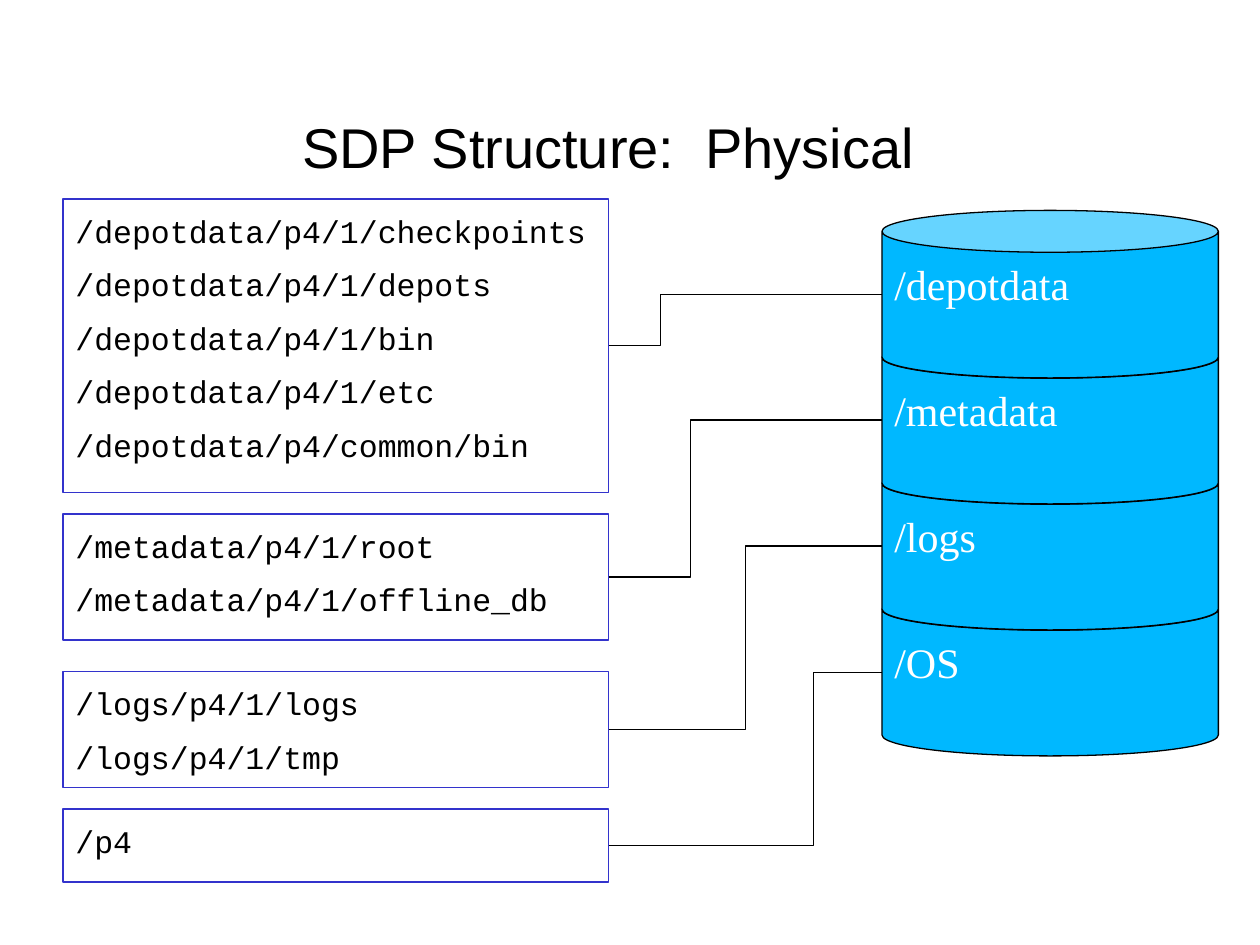
from lxml.etree import SubElement
from pptx import Presentation
from pptx.dml.color import RGBColor
from pptx.enum.shapes import MSO_CONNECTOR, MSO_SHAPE
from pptx.enum.text import MSO_ANCHOR, PP_ALIGN
from pptx.oxml.ns import qn
from pptx.util import Inches, Pt

BLACK = RGBColor(0x00, 0x00, 0x00)
WHITE = RGBColor(0xFF, 0xFF, 0xFF)
CYAN = RGBColor(0x00, 0xB8, 0xFF)
INDIGO = RGBColor(0x33, 0x33, 0xCC)

VOLUMES = [
    ("/depotdata", 1.58, 2.33, 0.19, [
        "/depotdata/p4/1/checkpoints",
        "/depotdata/p4/1/depots",
        "/depotdata/p4/1/bin",
        "/depotdata/p4/1/etc",
        "/depotdata/p4/common/bin",
    ]),
    ("/metadata", 4.08, 1, 0.3, ["/metadata/p4/1/root", "/metadata/p4/1/offline_db"]),
    ("/logs", 5.33, 0.92, 0.5, ["/logs/p4/1/logs", "/logs/p4/1/tmp"]),
    ("/OS", 6.42, 0.58, 0.75, ["/p4"]),
]


def write(tf, lines, font, size, color, align=PP_ALIGN.LEFT, anchor=MSO_ANCHOR.TOP):
    tf.word_wrap = True
    tf.vertical_anchor = anchor
    tf.text = "\n".join(lines)
    for i, p in enumerate(tf.paragraphs):
        p.alignment = align
        p.space_before = Pt(9 if i else 0)
        for r in p.runs:
            r.font.name = font
            r.font.size = Pt(size)
            r.font.color.rgb = color


def add_outlined(s, kind, box, line):
    sp = s.shapes.add_shape(kind, *[Inches(v) for v in box])
    sp.shadow.inherit = False
    sp.line.color.rgb = line
    sp.line.width = Pt(0.75)
    return sp


def add_title(s, box, text):
    sp = s.shapes.add_textbox(*[Inches(v) for v in box])
    write(sp.text_frame, [text], "Arial", 32, BLACK, PP_ALIGN.CENTER, MSO_ANCHOR.MIDDLE)


def add_disk_stack(s, box, names):
    left, top, width, height = box
    overlap = 0.33
    step = (height - overlap) / len(names)
    disks = {}
    for i, name in reversed(list(enumerate(names))):
        sp = add_outlined(s, MSO_SHAPE.CAN, (left, top + i * step, width, step + overlap), BLACK)
        sp.fill.solid()
        sp.fill.fore_color.rgb = CYAN
        write(sp.text_frame, [name], "Times New Roman", 24, WHITE)
        disks[name] = sp
    return disks


def add_path_box(s, box, paths):
    sp = add_outlined(s, MSO_SHAPE.RECTANGLE, box, INDIGO)
    sp.fill.background()
    sp.text_frame.margin_top = Inches(0.1)
    write(sp.text_frame, paths, "Courier New", 18, BLACK)
    return sp


def add_link(s, path_box, disk, bend):
    cxn = s.shapes.add_connector(
        MSO_CONNECTOR.ELBOW,
        path_box.left + path_box.width, path_box.top + path_box.height // 2,
        disk.left, disk.top + disk.height // 2)
    cxn.line.color.rgb = BLACK
    cxn.line.width = Pt(0.75)
    sp_pr = cxn._element.spPr
    SubElement(sp_pr, qn("a:effectLst"))
    guides = sp_pr.find(qn("a:prstGeom")).find(qn("a:avLst"))
    SubElement(guides, qn("a:gd"), name="adj1", fmla=f"val {round(bend * 100000)}")


def main():
    prs = Presentation()
    prs.slide_width, prs.slide_height = Inches(10), Inches(7.5)
    s = prs.slides.add_slide(prs.slide_layouts[6])
    add_title(s, (0.33, 0.83, 9, 0.66), "SDP Structure:  Physical")
    disks = add_disk_stack(s, (7, 1.67, 2.67, 4.33), [v[0] for v in VOLUMES])
    for name, top, height, bend, paths in VOLUMES:
        path_box = add_path_box(s, (0.5, top, 4.33, height), paths)
        add_link(s, path_box, disks[name], bend)
    prs.save("out.pptx")


if __name__ == "__main__":
    main()
